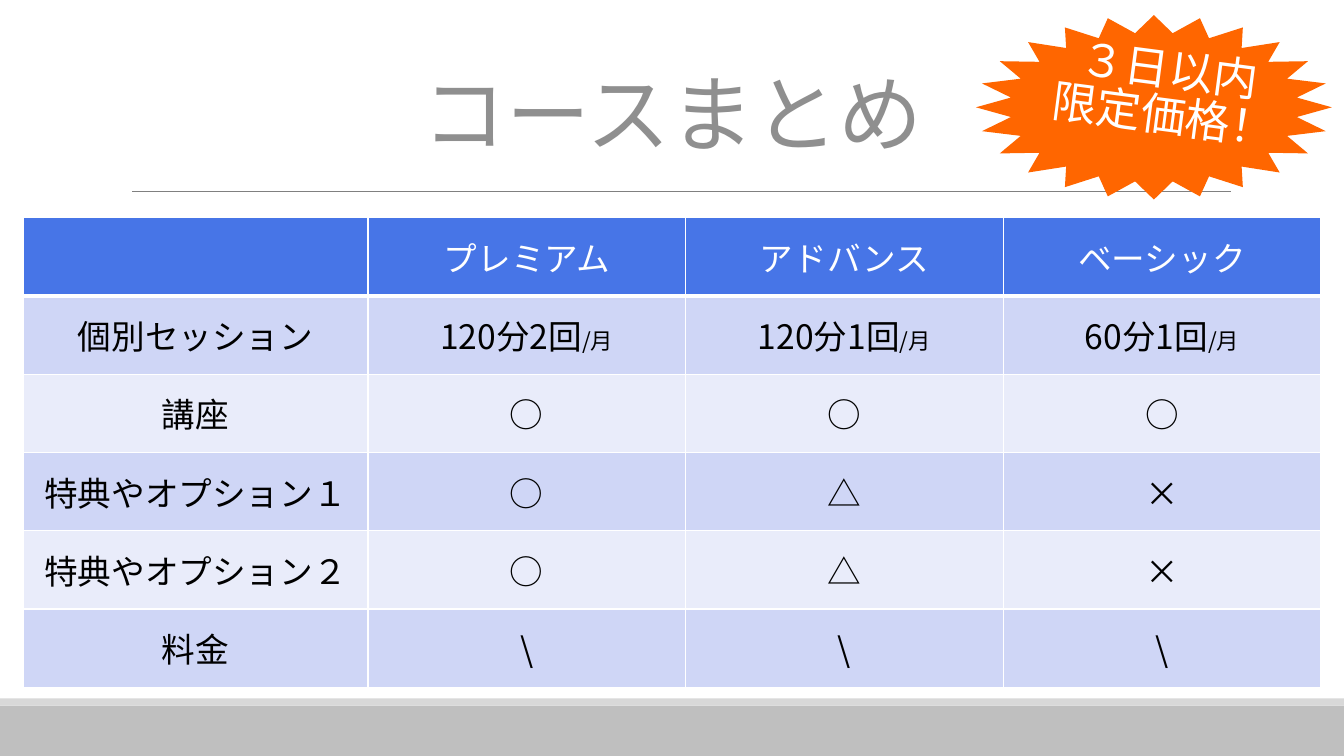
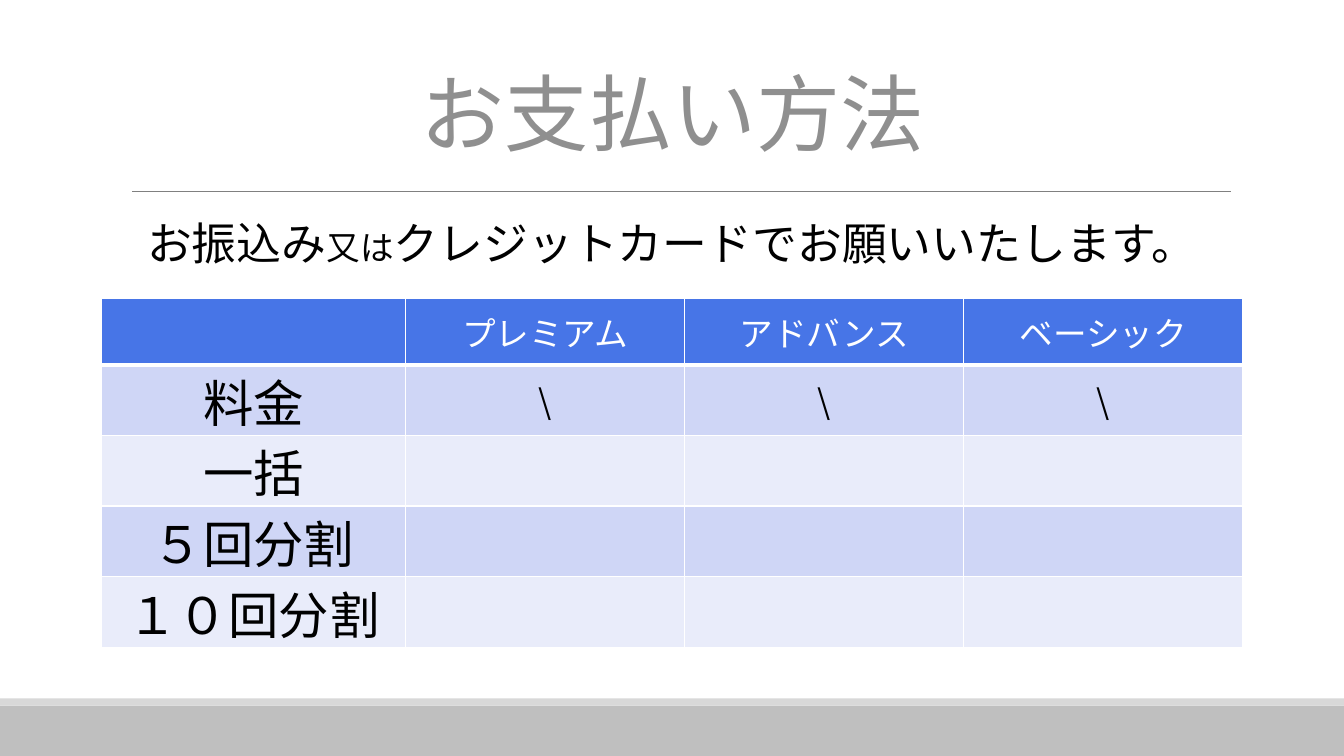
"""Build a course summary slide and a payment methods slide."""
import dataclasses
import typing

import pptx
import pptx.dml.color
import pptx.enum.shapes
import pptx.enum.text
import pptx.oxml
import pptx.oxml.ns
import pptx.util

Inches = pptx.util.Inches
Pt = pptx.util.Pt
ShapeType = pptx.enum.shapes.MSO_SHAPE
Anchor = pptx.enum.text.MSO_ANCHOR


@dataclasses.dataclass(frozen=True)
class Theme:
    font: str = "Noto Sans CJK JP"
    badge_font: str = "Noto Sans CJK SC"
    text: str = "000000"
    white: str = "FFFFFF"
    title: str = "8F8F8F"
    rule: str = "808080"
    band: str = "BFBFBF"
    band_edge: str = "D8D8D8"
    header: str = "4775E7"
    stripes: tuple[str, str] = ("CFD6F6", "E9ECFA")
    badge: str = "FF6600"
    title_size: int = 60
    label_size: int = 36
    lead_size: int = 32
    body_size: int = 24
    unit_size: int = 16


THEME = Theme()


class Box(typing.NamedTuple):
    left: float
    top: float
    width: float
    height: float

    def lengths(self) -> list[int]:
        return [Inches(value) for value in self]


class Run(typing.NamedTuple):
    text: str
    size: int = THEME.body_size


class Style(typing.NamedTuple):
    color: str = THEME.text
    font: str = THEME.font
    spacing: float = 1.0


Line = tuple[Run, ...]


@dataclasses.dataclass(frozen=True)
class Grid:
    box: Box
    label_width: float
    header_height: float
    rows: list[list[Line]]
    tall_labels: bool = False


def rgb(color: str) -> pptx.dml.color.RGBColor:
    return pptx.dml.color.RGBColor.from_string(color)


def write_line(paragraph, line: Line, style: Style) -> None:
    paragraph.alignment = pptx.enum.text.PP_ALIGN.CENTER
    paragraph.line_spacing = style.spacing
    for part in line:
        run = paragraph.add_run()
        run.text = part.text
        run.font.size = Pt(part.size)
        run.font.name = style.font
        run.font.color.rgb = rgb(style.color)
        east_asian = pptx.oxml.parse_xml(
            f'<a:ea {pptx.oxml.ns.nsdecls("a")} typeface="{style.font}"/>'
        )
        run.font._element.find(pptx.oxml.ns.qn("a:latin")).addnext(east_asian)


def add_text(slide, box: Box, lines: list[Line], style: Style,
             wrap: bool = True, rotation: float = 0) -> None:
    shape = slide.shapes.add_textbox(*box.lengths())
    shape.rotation = rotation
    text_frame = shape.text_frame
    text_frame.word_wrap = wrap
    for index, line in enumerate(lines):
        paragraph = text_frame.add_paragraph() if index else text_frame.paragraphs[0]
        write_line(paragraph, line, style)


def add_filled_shape(slide, kind, box: Box, color: str):
    shape = slide.shapes.add_shape(kind, *box.lengths())
    shape.shadow.inherit = False
    shape.fill.solid()
    shape.fill.fore_color.rgb = rgb(color)
    shape.line.fill.background()
    return shape


def set_borders(cell, bottom_width: float) -> None:
    properties = cell._tc.get_or_add_tcPr()
    widths = {"lnL": 1, "lnR": 1, "lnT": 1, "lnB": bottom_width}
    for index, (side, width) in enumerate(widths.items()):
        border = pptx.oxml.parse_xml(
            f'<a:{side} {pptx.oxml.ns.nsdecls("a")} w="{Pt(width)}"><a:solidFill>'
            f'<a:srgbClr val="{THEME.white}"/></a:solidFill></a:{side}>'
        )
        properties.insert(index, border)


def add_grid(slide, grid: Grid) -> None:
    row_count, column_count = len(grid.rows), len(grid.rows[0])
    frame = slide.shapes.add_table(row_count, column_count, *grid.box.lengths())
    table = frame.table
    table.first_row = table.horz_banding = False
    plan_width = (grid.box.width - grid.label_width) / (column_count - 1)
    body_height = (grid.box.height - grid.header_height) / (row_count - 1)
    for index, column in enumerate(table.columns):
        column.width = Inches(plan_width if index else grid.label_width)
    for row_index, line_cells in enumerate(grid.rows):
        is_header = row_index == 0
        table.rows[row_index].height = Inches(
            grid.header_height if is_header else body_height)
        for column_index, line in enumerate(line_cells):
            cell = table.cell(row_index, column_index)
            cell.fill.solid()
            cell.fill.fore_color.rgb = rgb(
                THEME.header if is_header else THEME.stripes[(row_index - 1) % 2])
            set_borders(cell, 3 if is_header else 1)
            is_tall = grid.tall_labels and not is_header and column_index == 0
            cell.vertical_anchor = Anchor.TOP if is_tall else Anchor.MIDDLE
            if is_tall:
                cell.margin_bottom = 0
            color = THEME.white if is_header else THEME.text
            style = Style(color, spacing=0.9 if is_tall else 1.0)
            write_line(cell.text_frame.paragraphs[0], line, style)


def add_base_slide(presentation, title: str):
    slide = presentation.slides.add_slide(presentation.slide_layouts[6])
    add_filled_shape(slide, ShapeType.RECTANGLE, Box(0, 7, 13.33, 0.5), THEME.band)
    add_filled_shape(slide, ShapeType.RECTANGLE, Box(0, 6.93, 13.33, 0.07), THEME.band_edge)
    rule = slide.shapes.add_connector(
        pptx.enum.shapes.MSO_CONNECTOR.STRAIGHT,
        Inches(1.31), Inches(1.9), Inches(12.21), Inches(1.9))
    rule.line.color.rgb = rgb(THEME.rule)
    rule.line.width = Pt(0.5)
    rule._element.spPr.append(
        pptx.oxml.parse_xml(f'<a:effectLst {pptx.oxml.ns.nsdecls("a")}/>'))
    add_text(slide, Box(1.22, 0.7, 10.9, 1.11), [(Run(title, THEME.title_size),)],
             Style(THEME.title, spacing=0.87))
    return slide


def plain_row(*texts: str, label_size: int = THEME.body_size) -> list[Line]:
    return [(Run(text, THEME.body_size if index else label_size),) if text else ()
            for index, text in enumerate(texts)]


def monthly(text: str) -> Line:
    return Run(text), Run("/月", THEME.unit_size)


PLANS = plain_row("", "プレミアム", "アドバンス", "ベーシック")
PRICES = ("料金", "\\", "\\", "\\")


def add_course_slide(presentation) -> None:
    slide = add_base_slide(presentation, "コースまとめ")
    sessions = [monthly(text) for text in ("120分2回", "120分1回", "60分1回")]
    rows = [
        PLANS,
        plain_row("個別セッション") + sessions,
        plain_row("講座", "○", "○", "○"),
        plain_row("特典やオプション１", "○", "△", "×"),
        plain_row("特典やオプション２", "○", "△", "×"),
        plain_row(*PRICES),
    ]
    add_grid(slide, Grid(Box(0.23, 2.16, 12.87, 4.66), 3.42, 4.66 / len(rows), rows))
    badge = add_filled_shape(
        slide, ShapeType.STAR_24_POINT, Box(9.68, 0.15, 3.53, 1.83), THEME.badge)
    badge.adjustments[0] = 0.405
    badge_lines = [(Run(text, THEME.lead_size),) for text in ("３日以内", "限定価格！")]
    add_text(slide, Box(10.33, 0.44, 2.45, 1.18), badge_lines,
             Style(THEME.white, THEME.badge_font, 0.85), rotation=7.5)


def add_payment_slide(presentation) -> None:
    slide = add_base_slide(presentation, "お支払い方法")
    body = [PRICES, *((label, "", "", "") for label in ("一括", "５回分割", "１０回分割"))]
    rows = [PLANS, *(plain_row(*texts, label_size=THEME.label_size) for texts in body)]
    add_grid(slide, Grid(Box(1.01, 2.96, 11.32, 3.46), 3.01, 0.66, rows, tall_labels=True))
    lead = (
        Run("お振込み", THEME.lead_size),
        Run("又は"),
        Run("クレジットカードでお願いいたします。", THEME.lead_size),
    )
    add_text(slide, Box(1.29, 2.15, 10.75, 0.64), [lead], Style(spacing=0.9), wrap=False)


def main() -> None:
    presentation = pptx.Presentation()
    presentation.slide_width = Inches(13.33)
    presentation.slide_height = Inches(7.5)
    add_course_slide(presentation)
    add_payment_slide(presentation)
    presentation.save("out.pptx")


if __name__ == "__main__":
    main()
